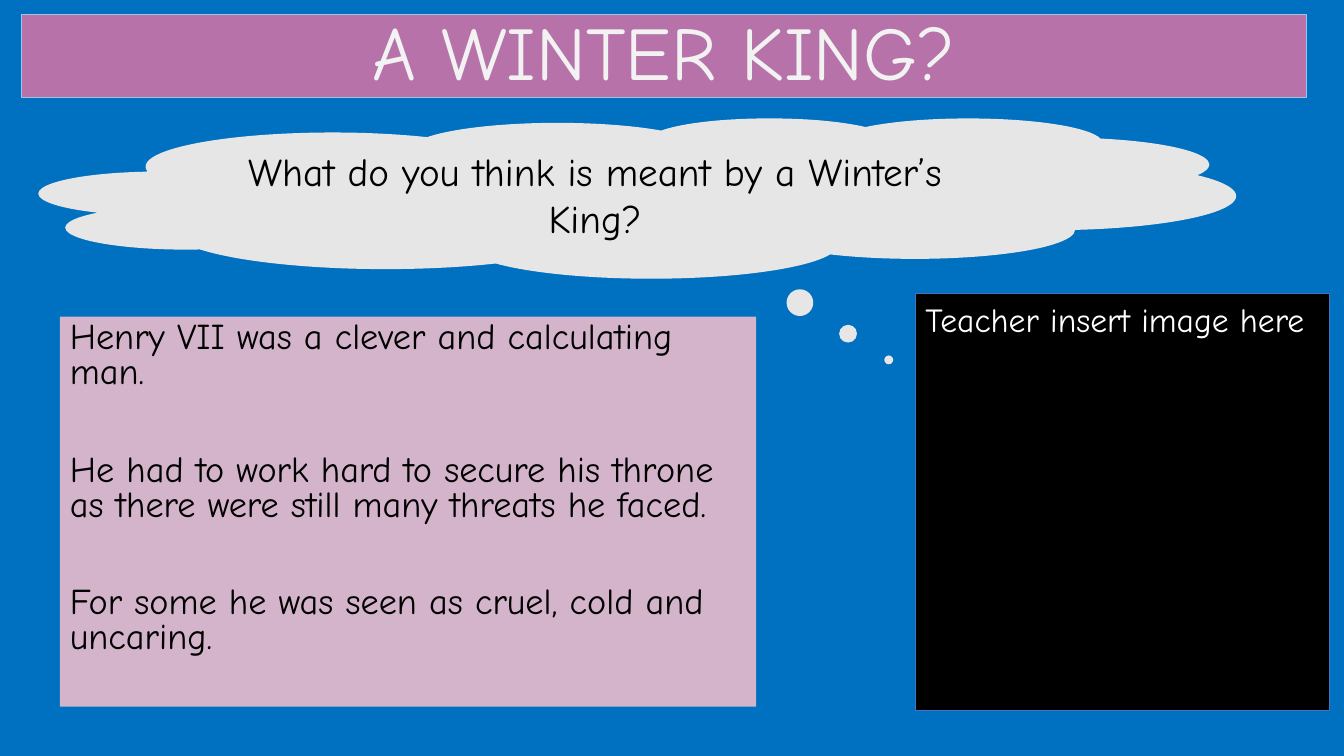
from pptx import Presentation
from pptx.dml.color import RGBColor
from pptx.enum.shapes import MSO_SHAPE
from pptx.enum.text import MSO_ANCHOR, MSO_AUTO_SIZE, PP_ALIGN
from pptx.oxml.ns import qn
from pptx.util import Pt
from lxml.etree import SubElement

FONT = "Comic Neue"
BLUE = RGBColor(0x00, 0x70, 0xC0)
MAUVE = RGBColor(0xB6, 0x72, 0xA9)
PALE_MAUVE = RGBColor(0xD4, 0xB4, 0xCB)
CLOUD_GREY = RGBColor(0xE7, 0xE6, 0xE6)
OFF_WHITE = RGBColor(0xF2, 0xF2, 0xF2)
WHITE = RGBColor(0xFF, 0xFF, 0xFF)
BLACK = RGBColor(0x00, 0x00, 0x00)
TITLE_EDGE = RGBColor(0x9D, 0xC3, 0xE6)
IMAGE_EDGE = RGBColor(0x44, 0x72, 0xC4)

HENRY_FACTS = [
    "Henry VII was a clever and calculating man.",
    "He had to work hard to secure his throne as there were still many threats he faced.",
    "For some he was seen as cruel, cold and uncaring.",
]


def place(part, box):
    """Move a part to its box, given as left, top, width and height in points."""
    part.left, part.top, part.width, part.height = (Pt(length) for length in box)


def paint(part, fill, edge=None):
    """Fill a part and give it a thin edge or none."""
    part.fill.solid()
    part.fill.fore_color.rgb = fill
    if edge is None:
        part.line.fill.background()
    else:
        part.line.color.rgb = edge
        part.line.width = Pt(0.75)


def write(part, lines, size, color, align=PP_ALIGN.LEFT, anchor=MSO_ANCHOR.TOP, spacing=1.0):
    """Write the lines as evenly formatted paragraphs."""
    frame = part.text_frame
    frame.text = "\n".join(lines)
    frame.word_wrap = True
    frame.auto_size = MSO_AUTO_SIZE.NONE
    frame.vertical_anchor = anchor
    for paragraph in frame.paragraphs:
        paragraph.alignment = align
        paragraph.line_spacing = spacing
        paragraph.space_before = Pt(0)
        for run in paragraph.runs:
            run.font.name = FONT
            run.font.size = Pt(size)
            run.font.color.rgb = color


def add_title(slide, box):
    """Set the title banner."""
    banner = slide.shapes.title
    place(banner, box)
    paint(banner, MAUVE, TITLE_EDGE)
    write(banner, ["A WINTER KING?"], 54, OFF_WHITE, PP_ALIGN.CENTER, MSO_ANCHOR.MIDDLE, 0.9)


def add_facts(slide, box):
    """Set the facts about Henry VII as unbulleted, widely spaced paragraphs."""
    facts = slide.placeholders[1]
    place(facts, box)
    paint(facts, PALE_MAUVE)
    write(facts, HENRY_FACTS, 25.9, BLACK, spacing=0.8)
    for index, paragraph in enumerate(facts.text_frame.paragraphs):
        paragraph.space_before = Pt(45 if index else 10)
        properties = paragraph._p.get_or_add_pPr()
        properties.set("marL", "0")
        properties.set("indent", "0")
        SubElement(properties, qn("a:buNone"))


def add_question(slide, box):
    """Add the thought cloud with the question."""
    cloud = slide.shapes.add_shape(MSO_SHAPE.CLOUD_CALLOUT, *(Pt(length) for length in box))
    cloud.shadow.inherit = False
    cloud.adjustments[0] = 0.21
    cloud.adjustments[1] = 1.01
    paint(cloud, CLOUD_GREY)
    write(cloud, ["What do you think is meant by a Winter’s King?"], 28, BLACK, PP_ALIGN.CENTER)


def add_image_space(slide, box):
    """Add the black panel kept free for the teacher's image."""
    panel = slide.shapes.add_shape(MSO_SHAPE.RECTANGLE, *(Pt(length) for length in box))
    panel.shadow.inherit = False
    paint(panel, BLACK, IMAGE_EDGE)
    write(panel, ["Teacher insert image here"], 24, WHITE)


def main():
    """Build the slide and save it."""
    presentation = Presentation()
    presentation.slide_width = Pt(960)
    presentation.slide_height = Pt(540)
    slide = presentation.slides.add_slide(presentation.slide_layouts[1])
    slide.background.fill.solid()
    slide.background.fill.fore_color.rgb = BLUE
    add_facts(slide, (42.7, 226.2, 497.5, 278.5))
    add_title(slide, (15.2, 10.2, 918, 59.5))
    add_question(slide, (28.1, 84.2, 854.6, 114.5))
    add_image_space(slide, (654, 209.6, 295.7, 298))
    presentation.save("out.pptx")


if __name__ == "__main__":
    main()
